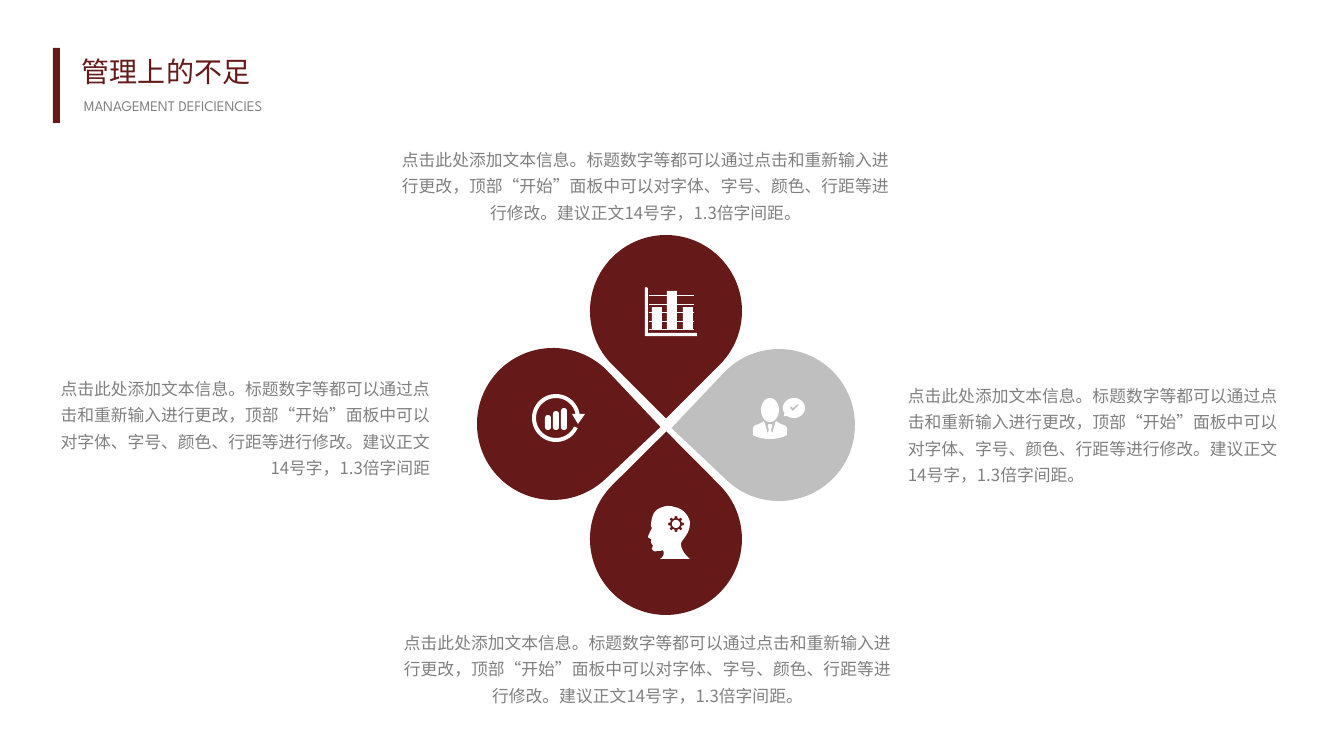
import math
from dataclasses import dataclass

from lxml import etree
from pptx import Presentation
from pptx import util as u
from pptx.dml.color import RGBColor
from pptx.enum import shapes, text
from pptx.oxml import ns

PX = 914400 / 100.8
MAROON, SILVER, GREY, WHITE = "651919", "BFBFBF", "808080", "FFFFFF"
CJK, LATIN = "Noto Sans CJK SC", "League Spartan"
LEFT, CENTER, RIGHT = text.PP_ALIGN.LEFT, text.PP_ALIGN.CENTER, text.PP_ALIGN.RIGHT
BODY = (
    "点击此处添加文本信息。标题数字等都可以通过点击和重新输入进行更改，"
    "顶部“开始”面板中可以对字体、字号、颜色、行距等进行修改。"
    "建议正文14号字，1.3倍字间距"
)
Contour = list[tuple[float, float]]


@dataclass
class Label:
    x: int
    y: int
    w: int
    h: int
    words: str
    size: float = 12
    font: str = CJK
    color: str = GREY
    align: text.PP_ALIGN = LEFT
    spacing: float = 1.3
    wrap: bool = True


@dataclass
class Petal:
    x: int
    y: int
    turn: float
    color: str = MAROON


LABELS = [
    Label(72, 50, 345, 44, "管理上的不足", 20, color=MAROON, spacing=1),
    Label(74, 92, 226, 28, "MANAGEMENT DEFICIENCIES", 10.5, LATIN, spacing=1, wrap=False),
    Label(389, 139, 513, 87, BODY + "。", align=CENTER),
    Label(391, 622, 513, 87, BODY + "。", align=CENTER),
    Label(898, 375, 393, 114, BODY + "。"),
    Label(47, 368, 393, 114, BODY, align=RIGHT),
]
PETALS = [
    Petal(590, 235, 135),
    Petal(590, 463, 315.2),
    Petal(477, 348, 46.6),
    Petal(703, 349, 223.4, SILVER),
]
PETAL_SIZE = 152

HEAD = [
    (667, 506), (669, 506, 672, 506, 674, 507), (684, 508, 690, 518, 690, 523),
    (690, 535, 681, 540, 681, 544), (681, 552, 690, 559, 690, 559), (660, 559),
    (660, 559, 666, 556, 663, 550), (662, 551, 659, 551, 657, 551),
    (655, 552, 653, 551, 652, 549), (652, 548, 653, 546, 653, 545),
    (652, 545, 651, 543, 651, 541), (652, 540, 651, 539, 651, 539),
    (651, 539, 648, 538, 648, 537), (648, 536, 652, 528, 652, 528), (651, 526),
    (651, 525, 651, 519, 654, 513), (657, 509, 661, 507, 667, 506),
]
SUIT = [
    (764, 421), (767, 430), (767, 432), (768, 433), (769, 429),
    (766, 424, 770, 424, 770, 424), (770, 424, 775, 424, 771, 429),
    (772, 433), (773, 432), (773, 430), (776, 421),
    (776, 421, 780, 424, 784, 425), (787, 426, 788, 429, 787, 431), (787, 435),
    (787, 435, 781, 439, 770, 439), (759, 439, 753, 435, 753, 435), (753, 431),
    (753, 429, 753, 426, 756, 425), (760, 424, 764, 421, 764, 421),
]
TICK = [(798, 404), (793, 408), (791, 406), (790, 408), (793, 411), (799, 405)]


def emu(px: float) -> int:
    return round(px * PX)


def rgb(color: str) -> RGBColor:
    return RGBColor.from_string(color)


def paint(sp, color: str) -> None:
    sp.shadow.inherit = False
    sp.fill.solid()
    sp.fill.fore_color.rgb = rgb(color)
    sp.line.fill.background()


def add_preset(slide, kind, x: int, y: int, w: int, h: int, color: str, turn: float = 0) -> None:
    sp = slide.shapes.add_shape(kind, emu(x), emu(y), emu(w), emu(h))
    sp.rotation = turn
    paint(sp, color)


def add_label(slide, label: Label) -> None:
    sp = slide.shapes.add_textbox(emu(label.x), emu(label.y), emu(label.w), emu(label.h))
    tf = sp.text_frame
    tf.text = label.words
    tf.word_wrap = label.wrap
    tf.auto_size = text.MSO_AUTO_SIZE.SHAPE_TO_FIT_TEXT
    p = tf.paragraphs[0]
    p.alignment = label.align
    p.line_spacing = label.spacing
    r = p.runs[0]
    r.font.size = u.Pt(label.size)
    r.font.name = label.font
    r.font.color.rgb = rgb(label.color)
    etree.SubElement(r.font._element, ns.qn("a:ea"), typeface=label.font)


def arc(cx: float, cy: float, rx: float, ry: float, start: float = 0, end: float = 360) -> Contour:
    angles = [math.radians(start + (end - start) * i / 36) for i in range(37)]
    return [(cx + rx * math.cos(a), cy + ry * math.sin(a)) for a in angles]


def box(x: int, y: int, w: int, h: int) -> Contour:
    return [(x, y), (x + w, y), (x + w, y + h), (x, y + h)]


def capsule(x: int, top: int, bottom: int, r: int) -> Contour:
    return arc(x, top + r, r, r, 180, 360) + arc(x, bottom - r, r, r, 0, 180)


def gear(cx: int, cy: int, root: int, tip: int, teeth: int) -> Contour:
    step = 360 / teeth
    points = []
    for i in range(teeth):
        for part, radius in ((-0.3, root), (-0.22, tip), (0.22, tip), (0.3, root)):
            a = math.radians((i + part) * step)
            points.append((cx + radius * math.cos(a), cy + radius * math.sin(a)))
    return points


def trace(steps: list[tuple[int, ...]]) -> Contour:
    points = [steps[0]]
    for step in steps[1:]:
        if len(step) == 2:
            points.append(step)
            continue
        knots = [points[-1], step[:2], step[2:4], step[4:]]
        for i in range(1, 9):
            t = i / 8
            weights = ((1 - t) ** 3, 3 * t * (1 - t) ** 2, 3 * t * t * (1 - t), t ** 3)
            points.append(tuple(sum(k * n[axis] for k, n in zip(weights, knots)) for axis in (0, 1)))
    return points


def add_icon(slide, contours: list[Contour]) -> None:
    outlines = [[(emu(x), emu(y)) for x, y in contour] for contour in contours]
    builder = slide.shapes.build_freeform(*outlines[0][0])
    for i, outline in enumerate(outlines):
        if i:
            builder.move_to(*outline[0])
        builder.add_line_segments(outline[1:], close=True)
    paint(builder.convert_to_shape(), WHITE)


def add_gridline(slide, y: int) -> None:
    line = slide.shapes.add_connector(
        shapes.MSO_CONNECTOR.STRAIGHT, emu(649), emu(y), emu(694), emu(y))
    line.line.color.rgb = rgb(WHITE)
    line.line.width = u.Pt(0.25)
    etree.SubElement(line._element.spPr, ns.qn("a:effectLst"))


def main() -> None:
    prs = Presentation()
    prs.slide_width, prs.slide_height = emu(1344), emu(756)
    slide = prs.slides.add_slide(prs.slide_layouts[6])

    add_preset(slide, shapes.MSO_SHAPE.RECTANGLE, 53, 48, 7, 75, MAROON)
    for petal in PETALS:
        add_preset(slide, shapes.MSO_SHAPE.TEAR, petal.x, petal.y,
                   PETAL_SIZE, PETAL_SIZE, petal.color, petal.turn)

    axes = [(645, 288), (646, 287), (648, 288), (648, 333), (697, 333), (697, 336), (645, 336)]
    columns = [box(x, top, 10, 330 - top) for x, top in ((652, 307), (667, 291), (683, 307))]
    add_icon(slide, [axes, *columns])
    for y in (295, 304, 312, 321, 329):
        add_gridline(slide, y)

    ring = arc(556, 418, 24, 24, -11, -335) + arc(556, 418, 20, 20, -335, -11)
    arrow = [(572, 414), (585, 414), (578, 424)]
    bars = [capsule(x, top, 430, 3) for x, top in ((548, 415), (556, 411), (564, 408))]
    add_icon(slide, [ring, arrow, *bars])

    add_icon(slide, [trace(HEAD), gear(676, 524, 6, 8, 8), arc(676, 524, 4, 4)])

    bubble = arc(794, 408, 11, 10, -210, 124) + [(784, 416)]
    add_icon(slide, [trace(SUIT), arc(770, 410, 9, 12), bubble, TICK])

    for label in LABELS:
        add_label(slide, label)
    prs.save("out.pptx")


if __name__ == "__main__":
    main()
